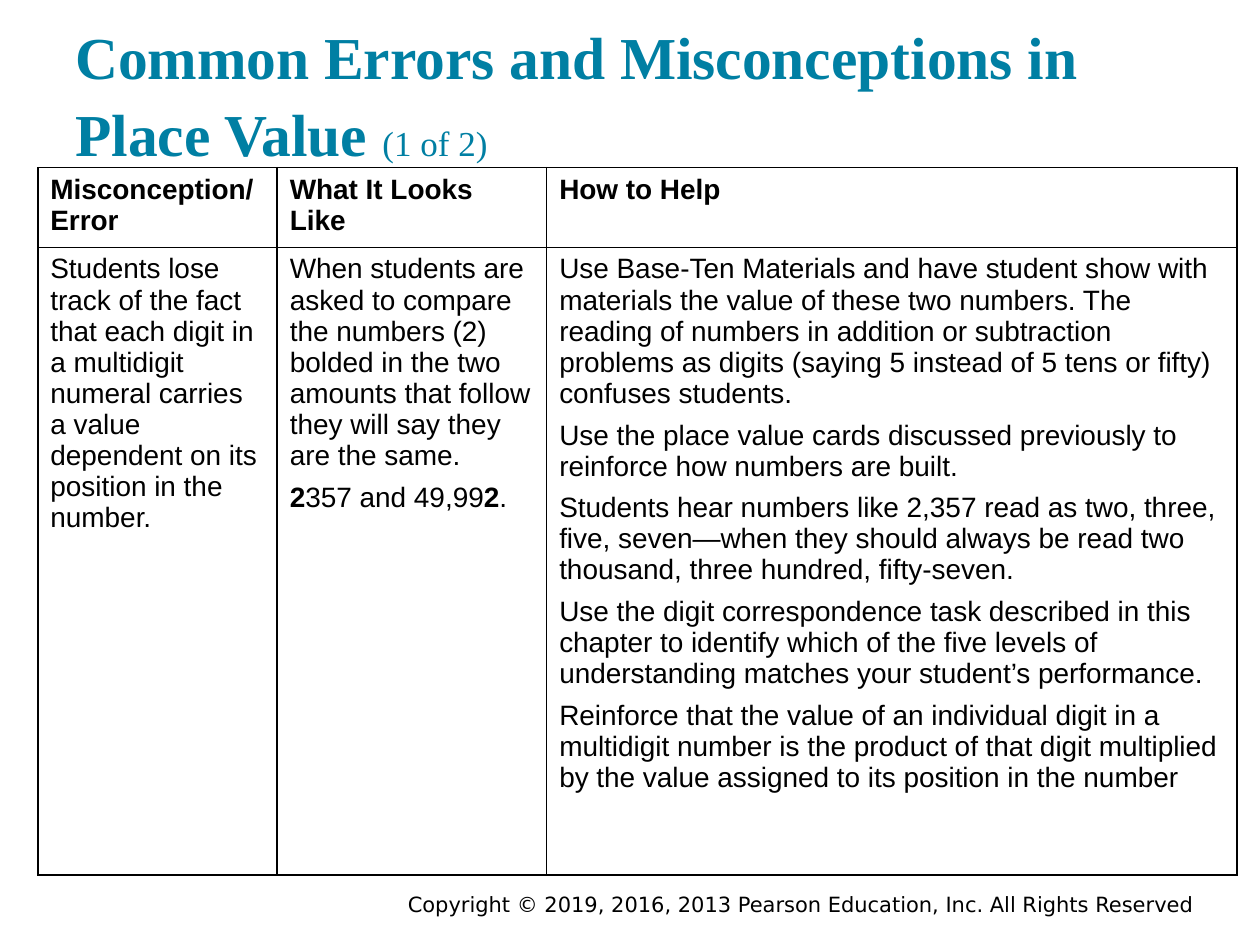
from dataclasses import dataclass

from lxml.etree import SubElement
from pptx import Presentation
from pptx.dml.color import RGBColor
from pptx.enum.text import MSO_ANCHOR, PP_ALIGN
from pptx.oxml.ns import qn
from pptx.util import Pt


@dataclass(frozen=True)
class Theme:
    title_color: RGBColor = RGBColor(0x00, 0x7F, 0xA3)
    ink: RGBColor = RGBColor(0, 0, 0)
    title_font: str = "Times New Roman"
    table_font: str = "Arial"
    footer_font: str = "DejaVu Sans"
    title_size: float = 34
    counter_size: float = 20
    table_size: float = 16
    footer_size: float = 12
    title_spacing: float = 1.09
    paragraph_gap: float = 6
    border_width: float = 1


class SlideBuilder:
    def __init__(self, slide, theme):
        self.slide = slide
        self.theme = theme

    def style(self, run, font, size, color, bold=False):
        run.font.name = font
        run.font.size = Pt(size)
        run.font.color.rgb = color
        run.font.bold = bold

    def text_frame(self, left, top, width, height, anchor):
        box = self.slide.shapes.add_textbox(Pt(left), Pt(top), Pt(width), Pt(height))
        frame = box.text_frame
        frame.word_wrap = True
        frame.vertical_anchor = anchor
        return frame

    def title(self, heading, counter, bounds):
        theme = self.theme
        frame = self.text_frame(*bounds, MSO_ANCHOR.BOTTOM)
        frame.margin_top = frame.margin_bottom = Pt(7.2)
        paragraph = frame.paragraphs[0]
        paragraph.line_spacing = theme.title_spacing
        for text, size, bold in ((heading, theme.title_size, True),
                                 (counter, theme.counter_size, False)):
            run = paragraph.add_run()
            run.text = text
            self.style(run, theme.title_font, size, theme.title_color, bold)

    def footer(self, text, bounds):
        theme = self.theme
        paragraph = self.text_frame(*bounds, MSO_ANCHOR.MIDDLE).paragraphs[0]
        paragraph.text = text
        paragraph.alignment = PP_ALIGN.RIGHT
        self.style(paragraph.runs[0], theme.footer_font, theme.footer_size, theme.ink)

    def border(self, cell):
        properties = cell._tc.get_or_add_tcPr()
        for side in ("lnL", "lnR", "lnT", "lnB"):
            line = SubElement(properties, qn(f"a:{side}"),
                              w=str(Pt(self.theme.border_width)))
            fill = SubElement(line, qn("a:solidFill"))
            SubElement(fill, qn("a:srgbClr"), val=str(self.theme.ink))

    def fill_cell(self, cell, paragraphs, bold):
        """Write paragraphs, each a string or a list of (text, bold) runs."""
        theme = self.theme
        self.border(cell)
        cell.fill.background()
        frame = cell.text_frame
        for index, content in enumerate(paragraphs):
            paragraph = frame.add_paragraph() if index else frame.paragraphs[0]
            if index:
                paragraph.space_before = Pt(theme.paragraph_gap)
            runs = [(content, bold)] if isinstance(content, str) else content
            for text, run_bold in runs:
                run = paragraph.add_run()
                run.text = text
                self.style(run, theme.table_font, theme.table_size, theme.ink, run_bold)

    def table(self, left, top, column_widths, row_heights, rows):
        table = self.slide.shapes.add_table(
            len(rows), len(column_widths), Pt(left), Pt(top),
            Pt(sum(column_widths)), Pt(sum(row_heights))).table
        table.horz_banding = False
        table.first_row = False
        for column, width in zip(table.columns, column_widths):
            column.width = Pt(width)
        for index, (row, height, contents) in enumerate(
                zip(table.rows, row_heights, rows)):
            row.height = Pt(height)
            for cell, paragraphs in zip(row.cells, contents):
                self.fill_cell(cell, paragraphs, bold=index == 0)


HEADERS = [["Misconception/ Error"], ["What It Looks Like"], ["How to Help"]]
MISCONCEPTION = [
    "Students lose track of the fact that each digit in a multidigit numeral "
    "carries a value dependent on its position in the number.",
]
LOOKS_LIKE = [
    "When students are asked to compare the numbers (2) bolded in the two "
    "amounts that follow they will say they are the same.",
    [("2", True), ("357 and 49,99", False), ("2", True), (".", False)],
]
HOW_TO_HELP = [
    "Use Base-Ten Materials and have student show with materials the value of "
    "these two numbers. The reading of numbers in addition or subtraction "
    "problems as digits (saying 5 instead of 5 tens or fifty) confuses students.",
    "Use the place value cards discussed previously to reinforce how numbers "
    "are built.",
    "Students hear numbers like 2,357 read as two, three, five, seven—when they "
    "should always be read two thousand, three hundred, fifty-seven.",
    "Use the digit correspondence task described in this chapter to identify "
    "which of the five levels of understanding matches your student’s performance.",
    "Reinforce that the value of an individual digit in a multidigit number is "
    "the product of that digit multiplied by the value assigned to its position "
    "in the number",
]


def main():
    presentation = Presentation()
    presentation.slide_width, presentation.slide_height = Pt(720), Pt(540)
    slide = presentation.slides.add_slide(presentation.slide_layouts[6])
    builder = SlideBuilder(slide, Theme())

    builder.footer(
        "Copyright © 2019, 2016, 2013 Pearson Education, Inc. All Rights Reserved",
        (210, 507.6, 479.5, 18))
    builder.title("Common Errors and Misconceptions in Place Value ", "(1 of 2)",
                  (36, 17.3, 648, 86.4))
    builder.table(21.6, 95.8, (136.8, 154, 394.6), (43, 358.6),
                  [HEADERS, [MISCONCEPTION, LOOKS_LIKE, HOW_TO_HELP]])
    presentation.save("out.pptx")


if __name__ == "__main__":
    main()
